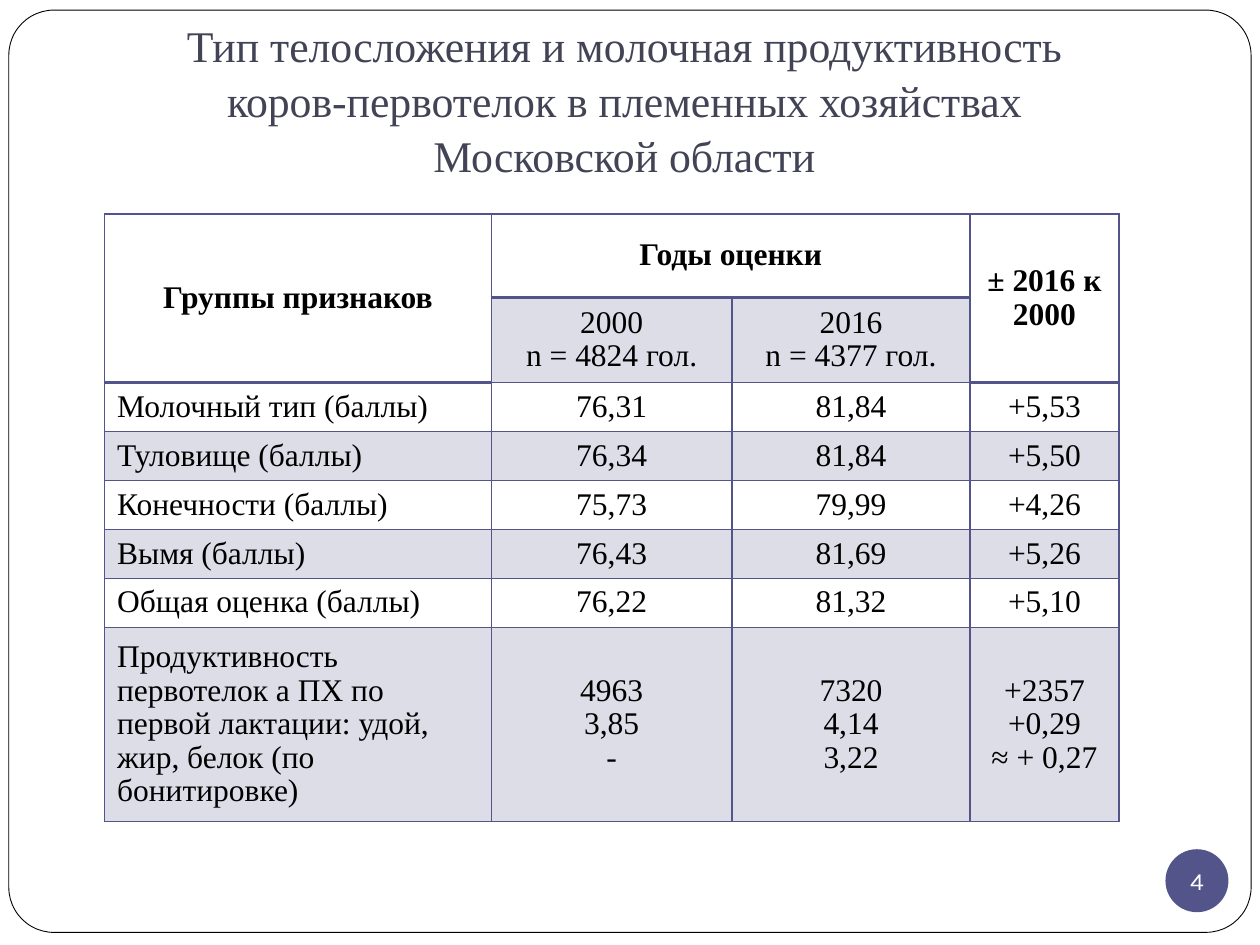
from lxml import etree
from pptx import Presentation
from pptx.dml.color import RGBColor
from pptx.enum.shapes import MSO_SHAPE
from pptx.enum.text import MSO_ANCHOR, PP_ALIGN
from pptx.oxml.ns import qn
from pptx.util import Inches, Pt

LEFT, CENTER = PP_ALIGN.LEFT, PP_ALIGN.CENTER
MIDDLE, BOTTOM = MSO_ANCHOR.MIDDLE, MSO_ANCHOR.BOTTOM
ROUNDED, OVAL = MSO_SHAPE.ROUNDED_RECTANGLE, MSO_SHAPE.OVAL
COLORS = {"white": "FFFFFF", "black": "000000", "title": "424456",
          "accent": "53548A", "tint": "DDDDE8"}
SERIF, SANS = "Times New Roman", "Karla"
TITLE = ("Тип телосложения и молочная продуктивность коров-первотелок "
         "в племенных хозяйствах Московской области")
COLUMN_WIDTHS = [3.07, 1.91, 1.89, 1.18]
ROW_HEIGHTS = [0.66, 0.65] + [0.38] * 5 + [1.48]
HEADER_SPANS = [(0, 0, 1, 0), (0, 1, 0, 2), (0, 3, 1, 3)]
ROWS = [
    ["Группы признаков", "Годы оценки", "", "± 2016 к 2000"],
    ["", "2000\nn = 4824 гол.", "2016\nn = 4377 гол.", ""],
    ["Молочный тип (баллы)", "76,31", "81,84", "+5,53"],
    ["Туловище (баллы)", "76,34", "81,84", "+5,50"],
    ["Конечности (баллы)", "75,73", "79,99", "+4,26"],
    ["Вымя (баллы)", "76,43", "81,69", "+5,26"],
    ["Общая оценка (баллы)", "76,22", "81,32", "+5,10"],
    ["Продуктивность первотелок а ПХ по первой лактации: удой, "
     "жир, белок (по бонитировке)",
     "4963\n3,85\n-", "7320\n4,14\n3,22", "+2357\n+0,29\n≈ + 0,27"],
]


def color(name):
    """Return the named palette colour."""
    return RGBColor.from_string(COLORS[name])


def apply(target, values):
    """Set each given attribute on the target."""
    for name, value in values.items():
        setattr(target, name, value)


def write(frame, text, ink, align=CENTER, spacing=1.0, **font):
    """Fill a text frame with one paragraph for each line."""
    frame.text = text
    for para in frame.paragraphs:
        apply(para, {"alignment": align, "line_spacing": spacing})
        for span in para.runs:
            apply(span.font, font)
            span.font.color.rgb = color(ink)


def add_panel(page, kind, box, fill):
    """Add a plain filled shape without shadow or outline."""
    shape = page.shapes.add_shape(kind, *map(Inches, box))
    shape.shadow.inherit = False
    shape.fill.solid()
    shape.fill.fore_color.rgb = color(fill)
    shape.line.fill.background()
    return shape


def add_frame(page, box):
    """Draw the rounded outline around the page."""
    shape = add_panel(page, ROUNDED, box, "white")
    shape.adjustments[0] = 0.049
    shape.line.color.rgb = color("black")
    shape.line.width = Pt(0.5)


def add_title(page, box):
    """Place the heading on the bottom of its box."""
    frame = page.shapes.add_textbox(*map(Inches, box)).text_frame
    apply(frame, {"word_wrap": True, "vertical_anchor": BOTTOM,
                  "margin_bottom": Inches(0.1)})
    write(frame, TITLE, "title", spacing=1.05, name=SERIF, size=Pt(25))


def rule_width(edge, column):
    """Return the width of the horizontal rule below a number of rows."""
    heavy = edge == 1 or (edge == 2 and column in (0, 3))
    return 2 if heavy else 1


def add_borders(cell, row, column):
    """Draw the four edges of a table cell."""
    widths = {"a:lnL": 1, "a:lnR": 1, "a:lnT": rule_width(row, column),
              "a:lnB": rule_width(row + 1, column)}
    properties = cell._tc.get_or_add_tcPr()
    for tag, width in widths.items():
        line = etree.SubElement(properties, qn(tag), w=str(Pt(width)))
        fill = etree.SubElement(line, qn("a:solidFill"))
        etree.SubElement(fill, qn("a:srgbClr"), val=COLORS["accent"])


def add_scores(page, box):
    """Build the table of scores by year."""
    table = page.shapes.add_table(
        len(ROWS), len(COLUMN_WIDTHS), *map(Inches, box)).table
    for column, width in zip(table.columns, COLUMN_WIDTHS):
        column.width = Inches(width)
    for row, height in zip(table.rows, ROW_HEIGHTS):
        row.height = Inches(height)
    for top, left, bottom, right in HEADER_SPANS:
        table.cell(top, left).merge(table.cell(bottom, right))
    for row, texts in enumerate(ROWS):
        for column, text in enumerate(texts):
            cell = table.cell(row, column)
            add_borders(cell, row, column)
            cell.vertical_anchor = MIDDLE
            tinted = row % 2 and not cell.is_spanned
            cell.fill.solid()
            cell.fill.fore_color.rgb = color("tint" if tinted else "white")
            if not cell.is_spanned:
                align = LEFT if column == 0 and row > 1 else CENTER
                write(cell.text_frame, text, "black", align, 0.96,
                      name=SERIF, size=Pt(18), bold=row == 0)


def add_page_number(page, box):
    """Place the page number in a disc."""
    frame = add_panel(page, OVAL, box, "accent").text_frame
    apply(frame, {"word_wrap": False, "vertical_anchor": MIDDLE,
                  "margin_left": 0, "margin_right": 0,
                  "margin_top": 0, "margin_bottom": 0})
    write(frame, "4", "white", name=SANS, size=Pt(14))


def main():
    """Build and save the deck."""
    deck = Presentation()
    apply(deck, {"slide_width": Inches(10), "slide_height": Inches(7.5)})
    page = deck.slides.add_slide(deck.slide_layouts[6])
    add_frame(page, (0.07, 0.08, 9.86, 7.32))
    add_title(page, (0.91, 0.29, 8.09, 1.25))
    add_scores(page, (0.83, 1.7, sum(COLUMN_WIDTHS), sum(ROW_HEIGHTS)))
    add_page_number(page, (9.25, 6.74, 0.5, 0.5))
    deck.save("out.pptx")


if __name__ == "__main__":
    main()
